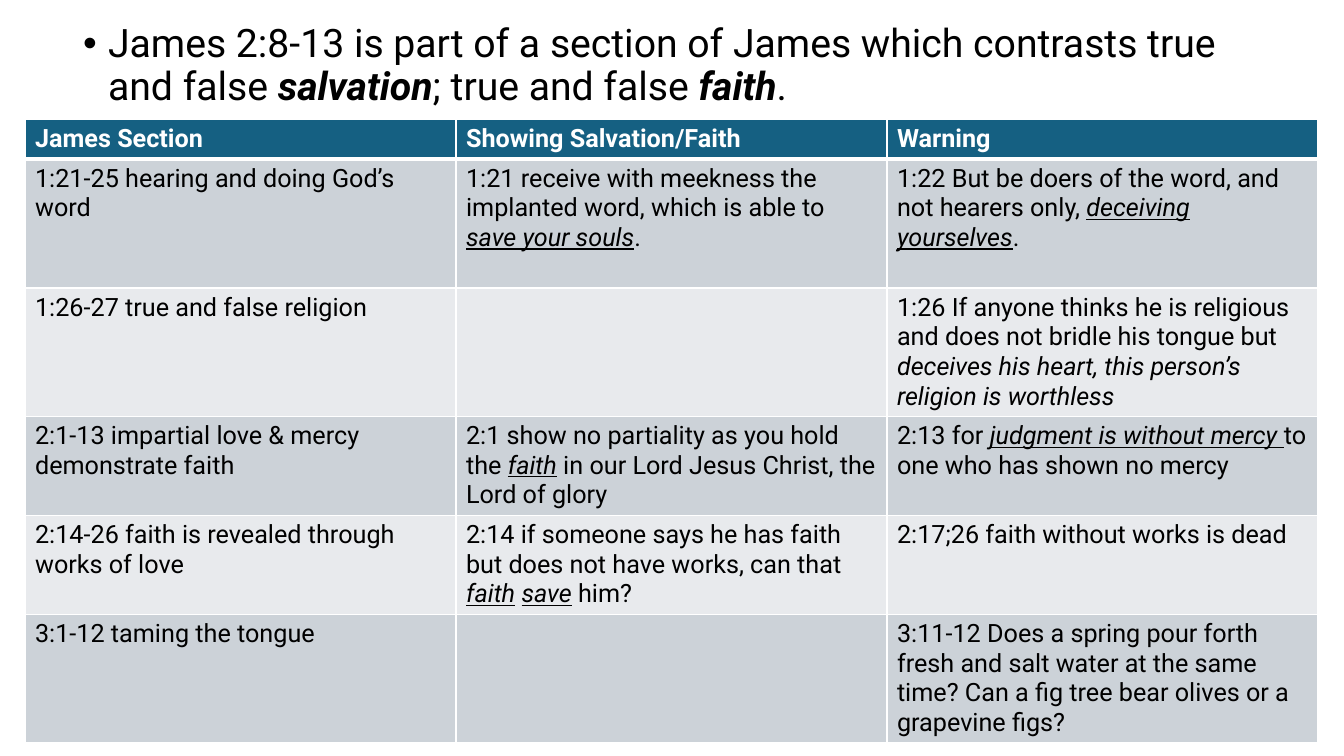
import pptx
import pptx.dml.color
import pptx.enum.text
import pptx.oxml
import pptx.oxml.ns
import pptx.util

RGBColor = pptx.dml.color.RGBColor
BLACK = RGBColor(0x00, 0x00, 0x00)
WHITE = RGBColor(0xFF, 0xFF, 0xFF)
TEAL = RGBColor(0x15, 0x60, 0x82)
BAND_DARK = RGBColor(0xCC, 0xD2, 0xD8)
BAND_LIGHT = RGBColor(0xE8, 0xEA, 0xED)

HEADINGS = ["James Section", "Showing Salvation/Faith", "Warning"]
SECTIONS = [
    (129, [
        [("1:21-25 hearing and doing God’s word", "")],
        [("1:21 receive with meekness the implanted word, which is able to ", ""),
         ("save your souls", "iu"), (".", "")],
        [("1:22 But be doers of the word, and not hearers only, ", ""),
         ("deceiving yourselves", "iu"), (".", "")],
    ]),
    (128, [
        [("1:26-27 true and false religion", "")],
        [],
        [("1:26 If anyone thinks he is religious and does not bridle his tongue but ", ""),
         ("deceives his heart, this person’s religion is worthless", "i")],
    ]),
    (99, [
        [("2:1-13 impartial love & mercy demonstrate faith", "")],
        [("2:1 show no partiality as you hold the ", ""), ("faith", "iu"),
         (" in our Lord Jesus Christ, the Lord of glory", "")],
        [("2:13 for ", ""), ("judgment is without mercy ", "iu"),
         ("to one who has shown no mercy", "")],
    ]),
    (99, [
        [("2:14-26 faith is revealed through works of love", "")],
        [("2:14 if someone says he has faith but does not have works, can that ", ""),
         ("faith", "iu"), (" ", ""), ("save", "iu"), (" him?", "")],
        [("2:17;26 faith without works is dead", "")],
    ]),
    (128, [
        [("3:1-12 taming the tongue", "")],
        [],
        [("3:11-12 Does a spring pour forth fresh and salt water at the same time? "
          "Can a fig tree bear olives or a grapevine figs?", "")],
    ]),
]


def px(n):
    return pptx.util.Emu(round(n * 914400 / 100.8))


class Deck:
    """Holds the font and the current slide, and adds elements to it."""

    def __init__(self, prs, font):
        self.font = font
        self.slide = prs.slides.add_slide(prs.slide_layouts[1])
        title = self.slide.shapes.title
        title.element.getparent().remove(title.element)

    def runs(self, p, parts, size, color):
        for text, style in parts:
            r = p.add_run()
            r.text = text
            f = r.font
            f.name, f.size = self.font, pptx.util.Pt(size)
            f.color.rgb = color
            f.bold, f.italic, f.underline = (c in style for c in "biu")

    def bullet(self, x, y, w, h, parts):
        sp = self.slide.placeholders[1]
        sp.left, sp.top, sp.width, sp.height = map(px, (x, y, w, h))
        tf = sp.text_frame
        tf.word_wrap = True
        tf.auto_size = pptx.enum.text.MSO_AUTO_SIZE.NONE
        p = tf.paragraphs[0]
        p.line_spacing = 0.9
        p.space_before = pptx.util.Pt(10)
        pPr = p._p.get_or_add_pPr()
        pPr.set("marL", str(px(25)))
        pPr.set("indent", str(-px(25)))
        ns = pptx.oxml.ns.nsdecls("a")
        pPr.append(pptx.oxml.parse_xml(f'<a:buFont {ns} typeface="Arial"/>'))
        pPr.append(pptx.oxml.parse_xml(f'<a:buChar {ns} char="•"/>'))
        self.runs(p, parts, 28, BLACK)

    def cell(self, cell, parts, color, fill, bottom=1):
        tcPr = cell._tc.get_or_add_tcPr()
        ns = pptx.oxml.ns.nsdecls("a")
        for side, pt in (("L", 1), ("R", 1), ("T", 1), ("B", bottom)):
            tcPr.append(pptx.oxml.parse_xml(
                f'<a:ln{side} {ns} w="{pptx.util.Pt(pt)}"><a:solidFill>'
                f'<a:srgbClr val="{WHITE}"/></a:solidFill></a:ln{side}>'))
        cell.fill.solid()
        cell.fill.fore_color.rgb = fill
        self.runs(cell.text_frame.paragraphs[0], parts, 18, color)

    def table(self, x, y, col_w, head_h, headings, sections):
        heights = [head_h] + [h for h, _ in sections]
        table = self.slide.shapes.add_table(
            len(heights), len(headings), px(x), px(y),
            px(col_w * len(headings)), px(sum(heights))).table
        for col in table.columns:
            col.width = px(col_w)
        for row, h in zip(table.rows, heights):
            row.height = px(h)
        for j, heading in enumerate(headings):
            self.cell(table.cell(0, j), [(heading, "b")], WHITE, TEAL, 3)
        for i, (_, cells) in enumerate(sections, 1):
            fill = BAND_DARK if i % 2 else BAND_LIGHT
            for j, parts in enumerate(cells):
                self.cell(table.cell(i, j), parts, BLACK, fill, 1)
                if i == 1:
                    top = table.cell(i, j)._tc.tcPr.find(pptx.oxml.ns.qn("a:lnT"))
                    top.set("w", str(pptx.util.Pt(3)))


def main():
    prs = pptx.Presentation()
    prs.slide_width, prs.slide_height = px(1344), px(756)
    deck = Deck(prs, "Roboto")
    deck.bullet(73, 19, 1159, 480, [
        ("James 2:8-13 is part of a section of James which contrasts true and false ", ""),
        ("salvation", "bi"), ("; true and false ", ""), ("faith", "bi"), (".", "")])
    deck.table(25, 119, 431, 40, HEADINGS, SECTIONS)
    prs.save("out.pptx")


if __name__ == "__main__":
    main()
